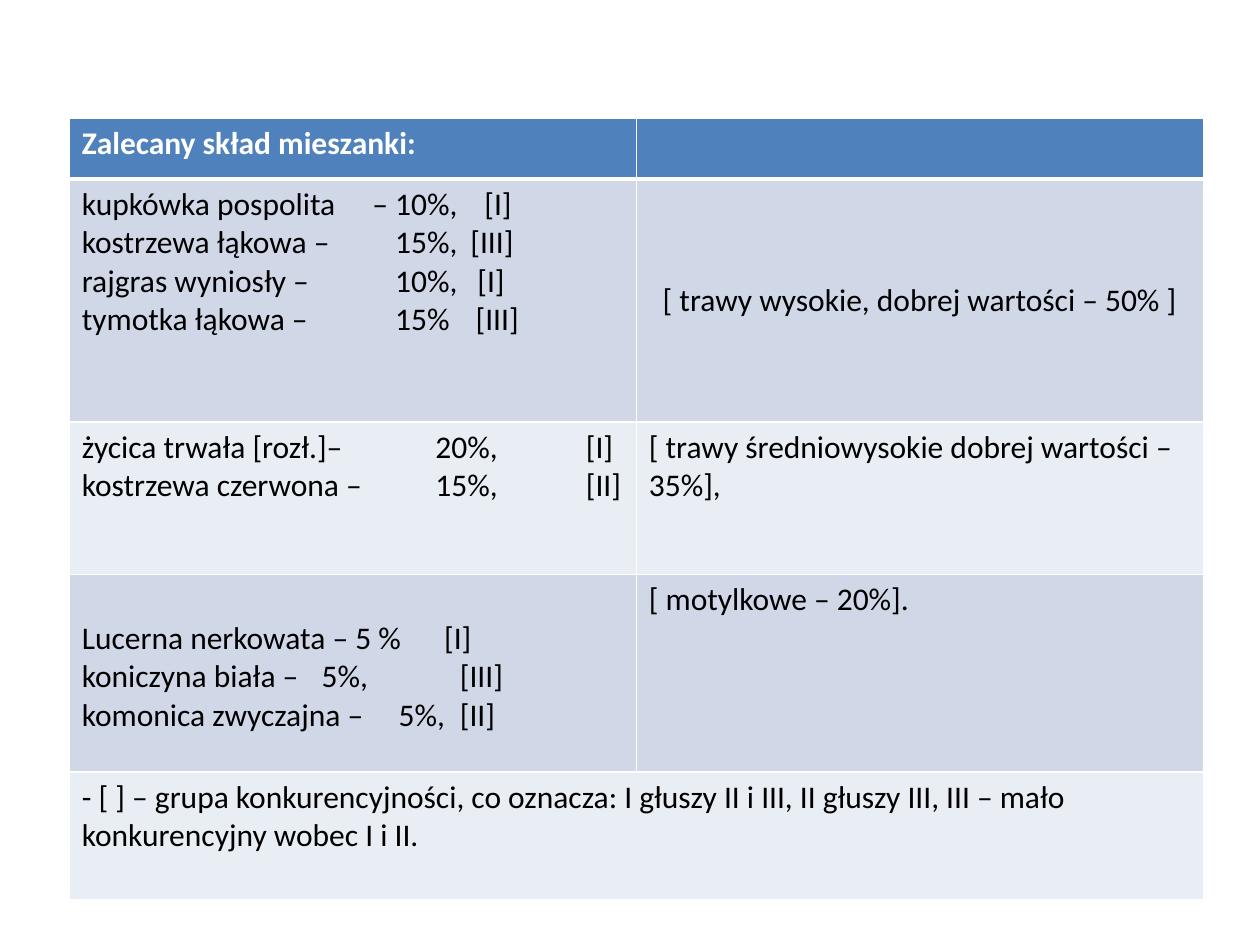
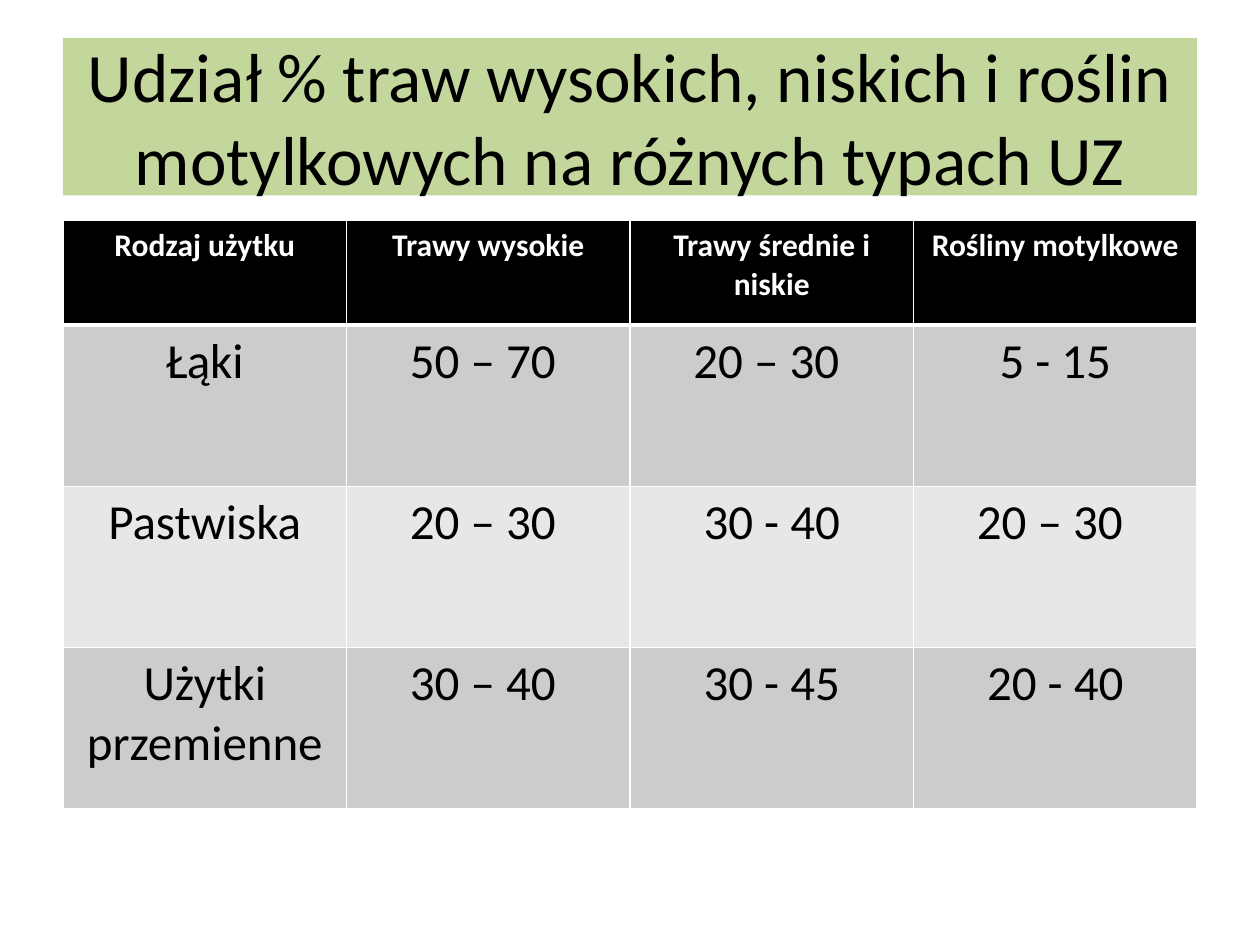
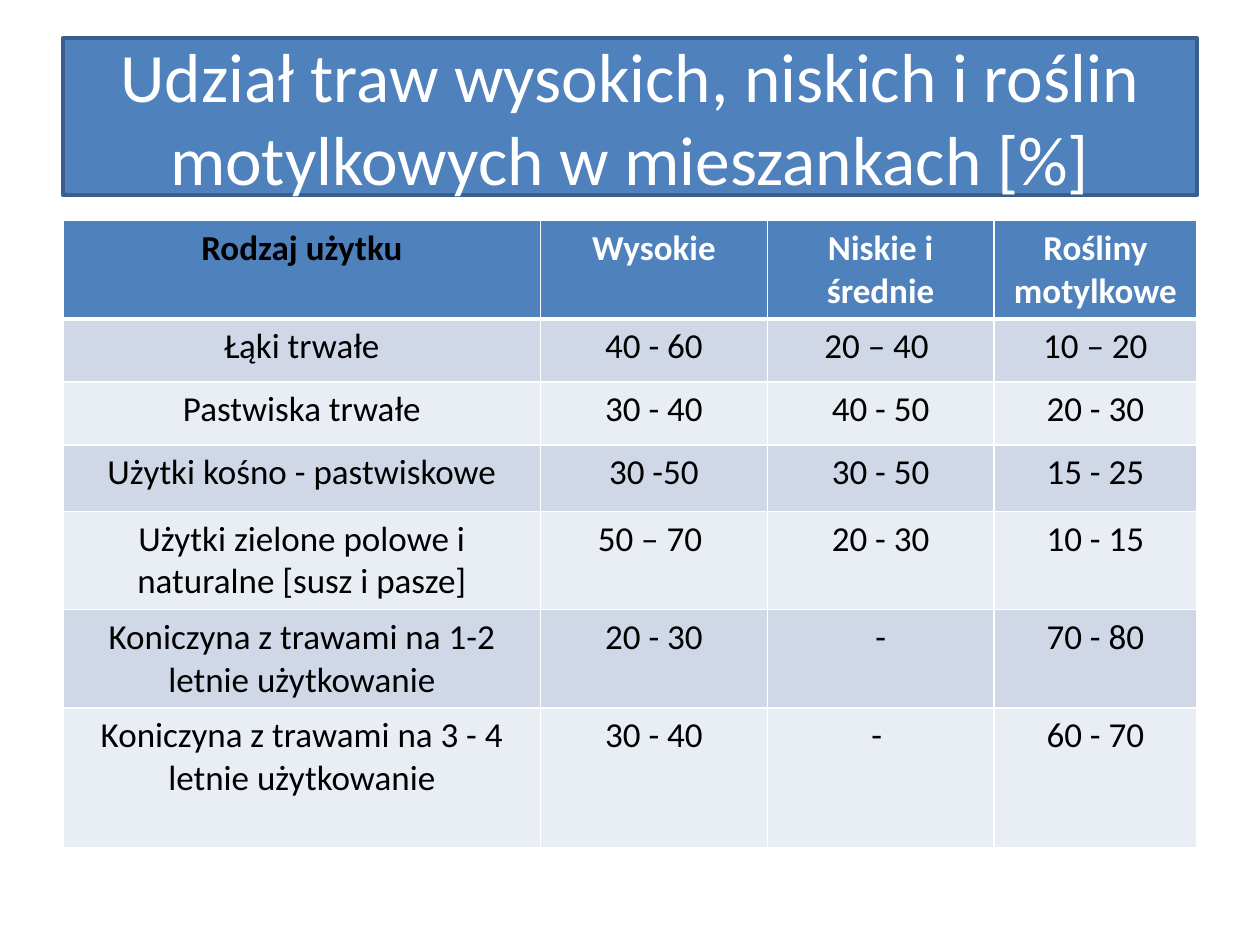
"""Build three slides on grassland seed mixtures."""
from dataclasses import dataclass
from itertools import cycle

from lxml.etree import SubElement
from pptx import Presentation
from pptx.dml.color import RGBColor
from pptx.enum.shapes import MSO_SHAPE
from pptx.enum.text import MSO_ANCHOR, PP_ALIGN
from pptx.oxml.ns import qn
from pptx.util import Pt


@dataclass(frozen=True)
class Theme:
    font: str = "Calibri"
    title_size: float = 39.6
    small: int = 18
    medium: int = 20
    large: int = 28
    black: str = "000000"
    white: str = "FFFFFF"
    blue: str = "4F81BD"
    dark_blue: str = "3A5F8C"
    green: str = "C3D69B"
    blue_bands: tuple = ("D0D8E8", "E9EDF4")
    grey_bands: tuple = ("CCCCCC", "E7E7E7")


THEME = Theme()

MIXTURE_ROWS = [
    [["Zalecany skład mieszanki:"], []],
    [
        [
            ("kupkówka pospolita\t– 10%,\t[I]", 166, 230),
            ("kostrzewa łąkowa –\t15%,\t[III]", 179, 222),
            ("rajgras wyniosły –\t10%,\t[I]", 179, 226),
            ("tymotka łąkowa –\t15%\t[III]", 179, 225),
        ],
        ["[ trawy wysokie, dobrej wartości – 50% ]"],
    ],
    [
        [
            ("życica trwała [rozł.]–\t20%,\t[I]", 202, 288),
            ("kostrzewa czerwona –\t15%,\t[II]", 202, 288),
        ],
        ["[ trawy średniowysokie dobrej wartości – 35%],"],
    ],
    [
        [
            ("Lucerna nerkowata – 5 %\t[I]", 207),
            ("koniczyna biała –\t5%,\t[III]", 137, 216),
            ("komonica zwyczajna –\t5%,\t[II]", 181, 216),
        ],
        ["[ motylkowe – 20%]."],
    ],
    [
        ["- [ ] – grupa konkurencyjności, co oznacza: I głuszy II i III, "
         "II głuszy III, III – mało konkurencyjny wobec I i II."],
        [],
    ],
]

SHARE_ROWS = [
    ["Rodzaj użytku", "Trawy wysokie", "Trawy średnie i niskie", "Rośliny motylkowe"],
    ["Łąki", "50 – 70 ", "20 – 30 ", "5 - 15"],
    ["Pastwiska", "20 – 30 ", "30 - 40", "20 – 30 "],
    ["Użytki przemienne", "30 – 40 ", "30 - 45", "20 - 40"],
]

SEED_ROWS = [
    ["Rodzaj użytku", "Wysokie", "Niskie i średnie", "Rośliny motylkowe"],
    ["Łąki trwałe", "40 - 60", "20 – 40 ", "10 – 20"],
    ["Pastwiska trwałe", "30 - 40", "40 - 50", "20 - 30"],
    ["Użytki kośno - pastwiskowe", "30 -50", "30 - 50", "15 - 25"],
    ["Użytki zielone polowe i naturalne [susz i pasze]", "50 – 70 ", "20 - 30", "10 - 15"],
    ["Koniczyna z trawami na 1-2 letnie użytkowanie", "20 - 30", "-", "70 - 80"],
    ["Koniczyna z trawami na 3 - 4 letnie użytkowanie", "30 - 40", "- ", "60 - 70"],
]


def rgb(code):
    return RGBColor.from_string(code)


def style_paragraph(paragraph, size, color, align=PP_ALIGN.LEFT, bold=False):
    paragraph.alignment = align
    font = paragraph.font
    font.name, font.size, font.bold = THEME.font, Pt(size), bold
    font.color.rgb = rgb(color)


def set_tab_stops(paragraph, stops):
    tab_list = SubElement(paragraph._p.get_or_add_pPr(), qn("a:tabLst"))
    for stop in stops:
        SubElement(tab_list, qn("a:tab"), pos=str(Pt(stop)), algn="l")


def set_borders(cell, bottom_width):
    properties = cell._tc.get_or_add_tcPr()
    for side, width in (("L", 1), ("R", 1), ("T", 1), ("B", bottom_width)):
        line = SubElement(properties, qn(f"a:ln{side}"), w=str(Pt(width)))
        fill = SubElement(line, qn("a:solidFill"))
        SubElement(fill, qn("a:srgbClr"), val=THEME.white)


def paint_cell(cell, color, bottom_width):
    set_borders(cell, bottom_width)
    cell.fill.solid()
    cell.fill.fore_color.rgb = rgb(color)


def write_cell(cell, lines, size, color, align, bold):
    entries = [(line,) if isinstance(line, str) else line for line in lines]
    cell.text_frame.text = "\n".join(text for text, *_ in entries)
    for paragraph, (_, *stops) in zip(cell.text_frame.paragraphs, entries):
        if stops:
            set_tab_stops(paragraph, stops)
        style_paragraph(paragraph, size, color, align, bold)


def add_grid(page, left, top, widths, heights, rows, header_fill, bands,
             header_size, body_size, align=PP_ALIGN.CENTER):
    table = page.shapes.add_table(
        len(rows), len(widths), Pt(left), Pt(top), Pt(sum(widths)), Pt(sum(heights))
    ).table
    for column, width in zip(table.columns, widths):
        column.width = Pt(width)
    fills = cycle(bands)
    for index, (row, height) in enumerate(zip(rows, heights)):
        header = index == 0
        table.rows[index].height = Pt(height)
        fill = header_fill if header else next(fills)
        size = header_size if header else body_size
        color = THEME.white if header else THEME.black
        for cell, content in zip(table.rows[index].cells, row):
            paint_cell(cell, fill, 3 if header else 1)
            lines = [content] if isinstance(content, str) else content
            write_cell(cell, lines, size, color, align, header)
    return table


def add_title(page, text, fill, color, outline=None):
    box = page.shapes.add_shape(MSO_SHAPE.RECTANGLE, Pt(36), Pt(21.6), Pt(648), Pt(90))
    box.shadow.inherit = False
    box.fill.solid()
    box.fill.fore_color.rgb = rgb(fill)
    if outline:
        box.line.color.rgb = rgb(outline)
        box.line.width = Pt(2)
    else:
        box.line.fill.background()
    frame = box.text_frame
    frame.word_wrap = True
    frame.vertical_anchor = MSO_ANCHOR.MIDDLE
    frame.text = text
    style_paragraph(frame.paragraphs[0], THEME.title_size, color, PP_ALIGN.CENTER)


def add_page(deck):
    return deck.slides.add_slide(deck.slide_layouts[6])


def build_mixture(deck):
    table = add_grid(add_page(deck), 39.6, 67.7, [324] * 2, [34.6, 139, 87, 113, 73],
                     MIXTURE_ROWS, THEME.blue, THEME.blue_bands,
                     THEME.small, THEME.small, PP_ALIGN.LEFT)
    tall_grasses = table.cell(1, 1)
    tall_grasses.vertical_anchor = MSO_ANCHOR.MIDDLE
    tall_grasses.text_frame.paragraphs[0].alignment = PP_ALIGN.CENTER
    table.cell(3, 0).margin_top = Pt(25.6)
    table.cell(4, 0).merge(table.cell(4, 1))


def build_shares(deck):
    page = add_page(deck)
    add_title(page, "Udział % traw wysokich, niskich i roślin motylkowych na różnych typach UZ",
              THEME.green, THEME.black)
    add_grid(page, 36, 126, [162] * 4, [59.8] + [92.1] * 3, SHARE_ROWS,
             THEME.black, THEME.grey_bands, THEME.small, THEME.large)


def build_seed_mixes(deck):
    page = add_page(deck)
    add_title(page, "Udział traw wysokich, niskich i roślin motylkowych w mieszankach [%]",
              THEME.blue, THEME.white, THEME.dark_blue)
    table = add_grid(page, 36, 126, [273, 129.5, 129.5, 116], [56, 36, 36, 38, 56, 56, 80],
                     SEED_ROWS, THEME.blue, THEME.blue_bands, THEME.medium, THEME.medium)
    land_use = table.cell(0, 0).text_frame.paragraphs[0]
    land_use.font.color.rgb = rgb(THEME.black)


def main():
    deck = Presentation()
    deck.slide_width, deck.slide_height = Pt(720), Pt(540)
    build_mixture(deck)
    build_shares(deck)
    build_seed_mixes(deck)
    deck.save("out.pptx")


if __name__ == "__main__":
    main()
